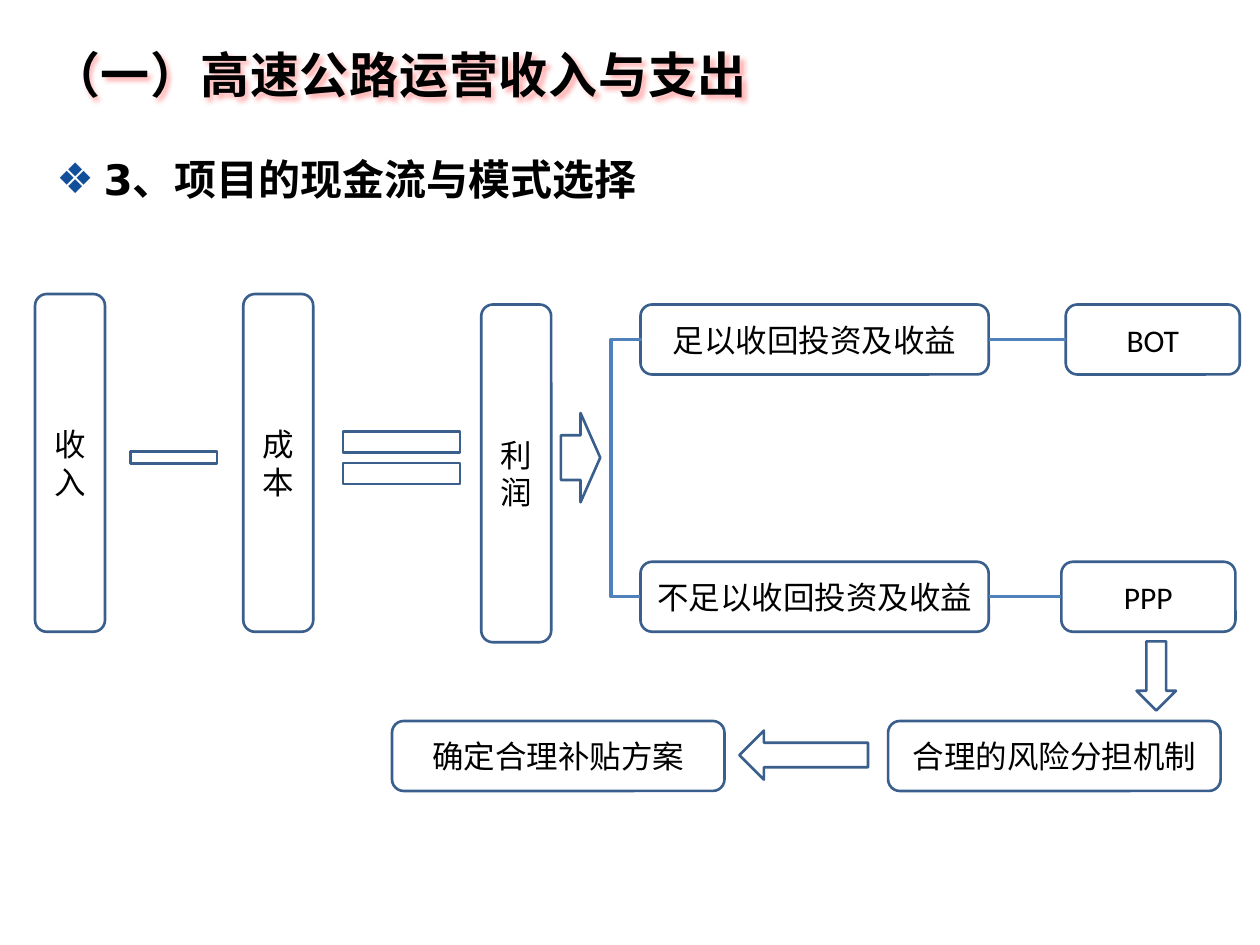
from dataclasses import dataclass

from lxml.etree import SubElement as Sub
from pptx import Presentation
from pptx.dml.color import RGBColor as Rgb
from pptx.enum.shapes import MSO_CONNECTOR as Link, MSO_SHAPE as Kind
from pptx.enum.text import MSO_ANCHOR as Anchor, PP_ALIGN as Align
from pptx.oxml import parse_xml
from pptx.oxml.ns import nsdecls, qn
from pptx.util import Pt


@dataclass(frozen=True)
class Theme:
    """Colours, fonts and sizes of the slide."""
    ink: str = "000000"
    edge: str = "3A5F8C"
    link: str = "4F81BD"
    mark: str = "114F9B"
    rim: str = "101A26"
    halo: str = "FF0000"
    han: str = "Noto Sans CJK SC"
    sans: str = "DejaVu Sans"
    face: str = "Calibri"
    title: int = 28
    body: int = 24
    text: int = 18


T = Theme()


def write(para, text, size, face, bold=False):
    """Add one styled run to a paragraph."""
    run = para.add_run()
    run.text = text
    font = run.font
    font.size, font.name, font.bold = Pt(size), face, bold
    font.color.rgb = Rgb.from_string(T.ink)
    Sub(font._element, qn("a:ea"), typeface=T.han)
    return run


def place(holder, x, y, w, h):
    """Move a placeholder and return its first paragraph."""
    holder.left, holder.top, holder.width, holder.height = map(Pt, (x, y, w, h))
    frame = holder.text_frame
    frame.margin_top = frame.margin_bottom = 0
    frame.vertical_anchor = Anchor.MIDDLE
    para = frame.paragraphs[0]
    para.alignment = Align.LEFT
    return para


def head(slide, text):
    """Fill the title and give it a faint rim and halo."""
    title = slide.shapes.title
    para = place(title, 22, 22, 508, 41)
    props = write(para, text, T.title, T.han, True).font._element
    props.set("spc", "50")
    props.insert(0, parse_xml(
        f'<a:ln {nsdecls("a")} w="13460"><a:solidFill><a:srgbClr val="{T.rim}">'
        '<a:alpha val="6000"/></a:srgbClr></a:solidFill></a:ln>'))
    title._element.spPr.append(parse_xml(
        f'<a:effectLst {nsdecls("a")}><a:outerShdw blurRad="38100" dist="19050" '
        f'dir="2700000"><a:srgbClr val="{T.halo}"><a:alpha val="30000"/>'
        '</a:srgbClr></a:outerShdw></a:effectLst>'))


def item(slide, text):
    """Fill the body with one bulleted line."""
    para = place(slide.placeholders[1], 25, 88.5, 398, 31)
    props = para._p.get_or_add_pPr()
    props.set("marL", str(Pt(27)))
    props.set("indent", str(Pt(-27)))
    Sub(Sub(props, qn("a:buClr")), qn("a:srgbClr"), val=T.mark)
    Sub(props, qn("a:buFont"), typeface=T.sans)
    Sub(props, qn("a:buChar"), char="❖")
    para.line_spacing = 0.9
    para.space_before = Pt(0)
    write(para, text, T.body, T.sans, True)


def shape(slide, kind, x, y, w, h):
    """Add an unfilled outlined shape."""
    form = slide.shapes.add_shape(kind, *map(Pt, (x, y, w, h)))
    form.shadow.inherit = False
    form.fill.background()
    form.line.color.rgb = Rgb.from_string(T.edge)
    form.line.width = Pt(1.5)
    return form


def box(slide, text, x, y, w=40, h=40):
    """Add a rounded box with centred text."""
    form = shape(slide, Kind.ROUNDED_RECTANGLE, x, y, w, h)
    frame = form.text_frame
    frame.word_wrap = True
    frame.vertical_anchor = Anchor.MIDDLE
    para = frame.paragraphs[0]
    para.alignment = Align.CENTER
    write(para, text, T.text, T.face)
    return form


def wire(slide, kind, *ends):
    """Add a plain connector between two points."""
    line = slide.shapes.add_connector(kind, *map(Pt, ends))
    line.line.color.rgb = Rgb.from_string(T.link)
    line.line.width = Pt(2)
    Sub(line._element.spPr, qn("a:effectLst"))
    return line


def join(slide, left, right):
    """Join the right side of one box to the left side of another."""
    line = wire(slide, Link.STRAIGHT, 0, 0, 0, 0)
    line.begin_connect(left, 3)
    line.end_connect(right, 1)


def fork(slide, x, top, low):
    """Add the bracket that opens onto both outcomes."""
    line = wire(slide, Link.ELBOW, x + 1, top, x, low)
    geom = line._element.spPr.find(qn("a:prstGeom"))
    guide = geom.find(qn("a:avLst"))
    Sub(guide, qn("a:gd"), name="adj1", fmla="val 1800000")


def main():
    """Build the slide and save it."""
    deck = Presentation()
    deck.slide_width, deck.slide_height = Pt(720), Pt(540)
    slide = deck.slides.add_slide(deck.slide_layouts[1])
    head(slide, "（一）高速公路运营收入与支出")
    item(slide, "3、项目的现金流与模式选择")

    for text, x, y in (("收入", 20, 168), ("成本", 139, 168), ("利润", 275, 174)):
        box(slide, text, x, y, h=193)

    high, low, left = 174, 321, 366
    for text, y, mode, x in (("足以收回投资及收益", high, "BOT", 609),
                             ("不足以收回投资及收益", low, "PPP", 606.5)):
        case = box(slide, text, left, y, 199)
        join(slide, case, box(slide, mode, x, y, 99.5))
    fork(slide, left, high + 20, low + 20)

    for text, x in (("合理的风险分担机制", 507.5), ("确定合理补贴方案", 224)):
        box(slide, text, x, 412, 190)

    for kind, *area in ((Kind.MATH_MINUS, 65.5, 247.5, 67.5, 28),
                        (Kind.MATH_EQUAL, 184, 236, 91, 51),
                        (Kind.RIGHT_ARROW, 320.5, 236, 22.5, 51),
                        (Kind.DOWN_ARROW, 649.5, 366.5, 22.5, 39.5),
                        (Kind.LEFT_ARROW, 422.5, 417.5, 73.5, 28)):
        shape(slide, kind, *area)
    deck.save("out.pptx")


if __name__ == "__main__":
    main()
